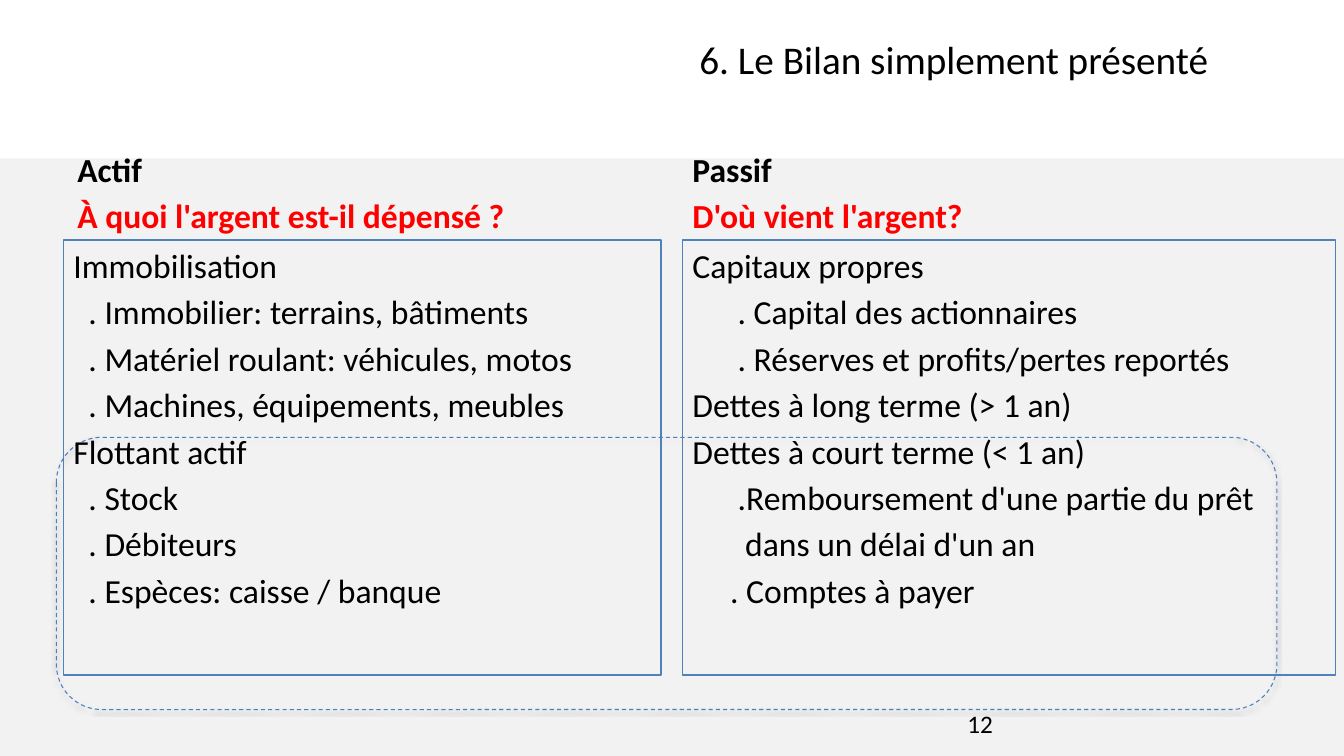
from lxml import etree
from pptx import Presentation
from pptx import util as u
from pptx.dml.color import RGBColor
from pptx.enum import dml, shapes, text
from pptx.oxml import parse_xml

INDENT_STEP = 0.19
COLUMN_TOP = 6.05
HEADING_TOP, HEADING_HEIGHT = 4.88, 1.17


def color(hex_string):
    return RGBColor.from_string(hex_string)


def write(shape, lines, size, space=0, anchor=text.MSO_ANCHOR.TOP):
    """Fill a shape with lines of (wording, colour, bold, indent steps)."""
    frame = shape.text_frame
    frame.word_wrap = True
    frame.vertical_anchor = anchor
    for index, (wording, hex_string, bold, steps) in enumerate(lines):
        paragraph = frame.add_paragraph() if index else frame.paragraphs[0]
        paragraph.text = wording
        paragraph.alignment = text.PP_ALIGN.LEFT
        if index:
            paragraph.space_before = u.Pt(space)
        if steps:
            paragraph._p.get_or_add_pPr().set("marL", str(u.Cm(steps * INDENT_STEP)))
        font = paragraph.runs[0].font
        font.name, font.size, font.bold = "Calibri", u.Pt(size), bold
        font.color.rgb = color(hex_string)


presentation = Presentation()
presentation.slide_width, presentation.slide_height = u.Cm(33.87), u.Cm(19.05)
slide = presentation.slides.add_slide(presentation.slide_layouts[6])

# Grey area under the title band
background = slide.shapes.add_shape(
    shapes.MSO_SHAPE.RECTANGLE, 0, u.Cm(3.99), u.Cm(33.87), u.Cm(15.06))
background.shadow.inherit = False
background.fill.solid()
background.fill.fore_color.rgb = color("F2F2F2")
background.line.fill.background()

# Dashed frame around the short-term items
frame_shape = slide.shapes.add_shape(
    shapes.MSO_SHAPE.ROUNDED_RECTANGLE, u.Cm(1.42), u.Cm(11.02), u.Cm(30.76), u.Cm(6.86))
frame_shape.fill.background()
frame_shape.line.color.rgb = color("4B7EBC")
frame_shape.line.width = u.Pt(0.75)
frame_shape.line.dash_style = dml.MSO_LINE.DASH
frame_shape.shadow.inherit = False
effects = frame_shape._element.spPr.find(
    "{http://schemas.openxmlformats.org/drawingml/2006/main}effectLst")
effects.append(parse_xml(
    '<a:outerShdw xmlns:a="http://schemas.openxmlformats.org/drawingml/2006/main" '
    'blurRad="40000" dist="23000" dir="5400000" rotWithShape="0">'
    '<a:srgbClr val="000000"><a:alpha val="35000"/></a:srgbClr></a:outerShdw>'))

# Balance sheet columns: heading left, box left, box width, heading, question, items
columns = [
    (1.7, 1.6, 15.06, "Actif", "À quoi l'argent est-il dépensé ?", [
        ("Immobilisation", 0),
        (". Immobilier: terrains, bâtiments", 2),
        (". Matériel roulant: véhicules, motos", 2),
        (". Machines, équipements, meubles", 2),
        ("Flottant actif", 0),
        (". Stock", 2),
        (". Débiteurs", 2),
        (". Espèces: caisse / banque", 2),
    ]),
    (17.2, 17.2, 16.46, "Passif", "D'où vient l'argent?", [
        ("Capitaux propres", 0),
        (". Capital des actionnaires", 6),
        (". Réserves et profits/pertes reportés", 6),
        ("Dettes à long terme (> 1 an)", 0),
        ("Dettes à court terme (< 1 an)", 0),
        (".Remboursement d'une partie du prêt", 6),
        ("dans un délai d'un an", 7),
        (". Comptes à payer", 5),
    ]),
]
for heading_left, box_left, box_width, heading, question, items in columns:
    heading_box = slide.shapes.add_textbox(
        u.Cm(heading_left), u.Cm(HEADING_TOP), u.Cm(14.96), u.Cm(HEADING_HEIGHT))
    write(heading_box, [(heading, "000000", True, 0), (question, "FF0000", True, 0)],
          24, 4.3, text.MSO_ANCHOR.BOTTOM)

    box = slide.shapes.add_shape(
        shapes.MSO_SHAPE.RECTANGLE, u.Cm(box_left), u.Cm(COLUMN_TOP), u.Cm(box_width), u.Cm(10.97))
    box.shadow.inherit = False
    box.fill.background()
    box.line.color.rgb = color("4F81BD")
    box.line.width = u.Pt(1.25)
    write(box, [(item, "000000", False, steps) for item, steps in items], 24, 4.3)

# Slide number
number = slide.shapes.add_textbox(u.Cm(24.13), u.Cm(17.73), u.Cm(7.9), u.Cm(1.02))
write(number, [("12", "000000", False, 0)], 18)

# Title
title = slide.shapes.add_textbox(u.Cm(15.88), u.Cm(0.76), u.Cm(16.31), u.Cm(1.45))
write(title, [("6. Le Bilan simplement présenté", "000000", False, 0)], 28)
title.text_frame.paragraphs[0].alignment = text.PP_ALIGN.CENTER

presentation.save("out.pptx")
